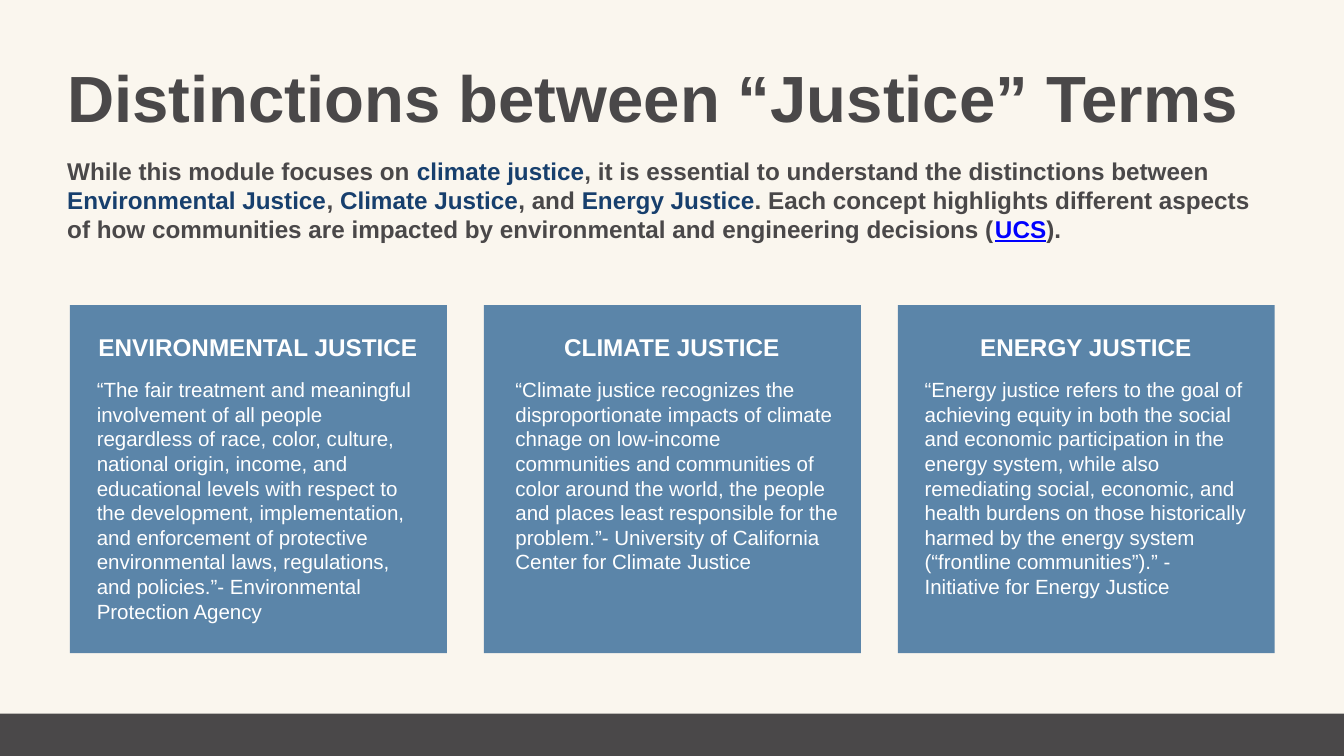
from pptx import Presentation
from pptx.dml.color import RGBColor
from pptx.enum.shapes import MSO_SHAPE
from pptx.enum.text import MSO_ANCHOR, MSO_AUTO_SIZE, PP_ALIGN
from pptx.util import Inches, Pt
from lxml import etree

RECTANGLE = MSO_SHAPE.RECTANGLE
TOP = MSO_ANCHOR.TOP
NO_FIT = MSO_AUTO_SIZE.NONE
LEFT, CENTER = PP_ALIGN.LEFT, PP_ALIGN.CENTER

FONT = "Arial"
CREAM, CHARCOAL, STEEL = "FAF6EE", "4A4849", "5B85A9"
NAVY, LINK, WHITE = "173F6D", "0000FF", "FFFFFF"
LINE_FACTOR = 1.2
CARD_LEFT, CARD_PITCH = 1.04, 6.16

INTRO = [
    ("While this module focuses on ", CHARCOAL),
    ("climate justice", NAVY),
    (", it is essential to understand the distinctions between ", CHARCOAL),
    ("Environmental Justice", NAVY),
    (", ", CHARCOAL),
    ("Climate Justice", NAVY),
    (", and ", CHARCOAL),
    ("Energy Justice", NAVY),
    (". Each concept highlights different aspects of how communities are "
     "impacted by environmental and engineering decisions (", CHARCOAL),
    ("UCS", LINK),
    (").", CHARCOAL),
]

# Each card: heading, definition, left inset of the definition
CARDS = [
    ("ENVIRONMENTAL JUSTICE",
     "“The fair treatment and meaningful involvement of all people regardless "
     "of race, color, culture, national origin, income, and educational levels "
     "with respect to the development, implementation, and enforcement of "
     "protective environmental laws, regulations, and policies.”- "
     "Environmental Protection Agency", 0.4),
    ("CLIMATE JUSTICE",
     "“Climate justice recognizes the disproportionate impacts of climate "
     "chnage on low-income communities and communities of color around the "
     "world, the people and places least responsible for the problem.”- "
     "University of California Center for Climate Justice", 0.47),
    ("ENERGY JUSTICE",
     "“Energy justice refers to the goal of achieving equity in both the "
     "social and economic participation in the energy system, while also "
     "remediating social, economic, and health burdens on those historically "
     "harmed by the energy system (“frontline communities”).” - Initiative "
     "for Energy Justice", 0.4),
]


def color(value):
    """Return the colour for a hex string."""
    return RGBColor.from_string(value)


def place(box, left, top, width, height):
    """Move and size a box, in inches."""
    box.left, box.top = Inches(left), Inches(top)
    box.width, box.height = Inches(width), Inches(height)


def write(box, spans, size, bold=False, align=LEFT):
    """Fill a box with one paragraph of coloured spans."""
    frame = box.text_frame
    frame.word_wrap = True
    frame.auto_size = NO_FIT
    frame.vertical_anchor = TOP
    frame.margin_left = frame.margin_right = 0
    frame.margin_top = frame.margin_bottom = 0
    para = frame.paragraphs[0]
    para.alignment = align
    para.space_before = Pt(0)
    para.line_spacing = Pt(LINE_FACTOR * size)
    for text, hue in spans:
        span = para.add_run()
        span.text = text
        span.font.name = FONT
        span.font.size = Pt(size)
        span.font.bold = bold
        span.font.underline = hue == LINK
        span.font.color.rgb = color(hue)
    return para


def remove_bullet(para):
    """Clear the bullet and hanging indent of a body paragraph."""
    properties = para._p.get_or_add_pPr()
    properties.set("marL", "0")
    properties.set("indent", "0")
    namespace = properties.nsmap["a"]
    etree.SubElement(properties, f"{{{namespace}}}buNone")


def add_block(page, left, top, width, height, fill):
    """Add a flat rectangle without an outline."""
    block = page.shapes.add_shape(
        RECTANGLE, Inches(left), Inches(top), Inches(width), Inches(height))
    block.shadow.inherit = False
    block.fill.solid()
    block.fill.fore_color.rgb = color(fill)
    block.line.fill.background()


def add_text(page, left, top, width, height, text, size, bold=False, align=LEFT):
    """Add a white text box."""
    box = page.shapes.add_textbox(
        Inches(left), Inches(top), Inches(width), Inches(height))
    write(box, [(text, WHITE)], size, bold, align)


def add_card(page, left, heading, definition, inset):
    """Add a panel with its heading and definition."""
    add_block(page, left, 4.54, 5.61, 5.18, STEEL)
    add_text(page, left + inset, 5.61, 4.8, 3.7, definition, 22)
    add_text(page, left + 0.4, 4.94, 4.8, 0.44, heading, 26, True, CENTER)


def main():
    """Build the slide on justice terms and save it."""
    deck = Presentation()
    deck.slide_width, deck.slide_height = Inches(20), Inches(11.25)
    page = deck.slides.add_slide(deck.slide_layouts[1])
    page.background.fill.solid()
    page.background.fill.fore_color.rgb = color(CREAM)

    title, intro = page.shapes.title, page.placeholders[1]
    place(title, 1, 0.85, 18, 1.18)
    write(title, [("Distinctions between “Justice” Terms", CHARCOAL)], 70, True)
    place(intro, 1, 2.32, 18, 1.31)
    remove_bullet(write(intro, INTRO, 26, True))

    for index, card in enumerate(CARDS):
        add_card(page, CARD_LEFT + index * CARD_PITCH, *card)
    add_block(page, 0, 10.62, 20, 0.63, CHARCOAL)
    deck.save("out.pptx")


if __name__ == "__main__":
    main()
